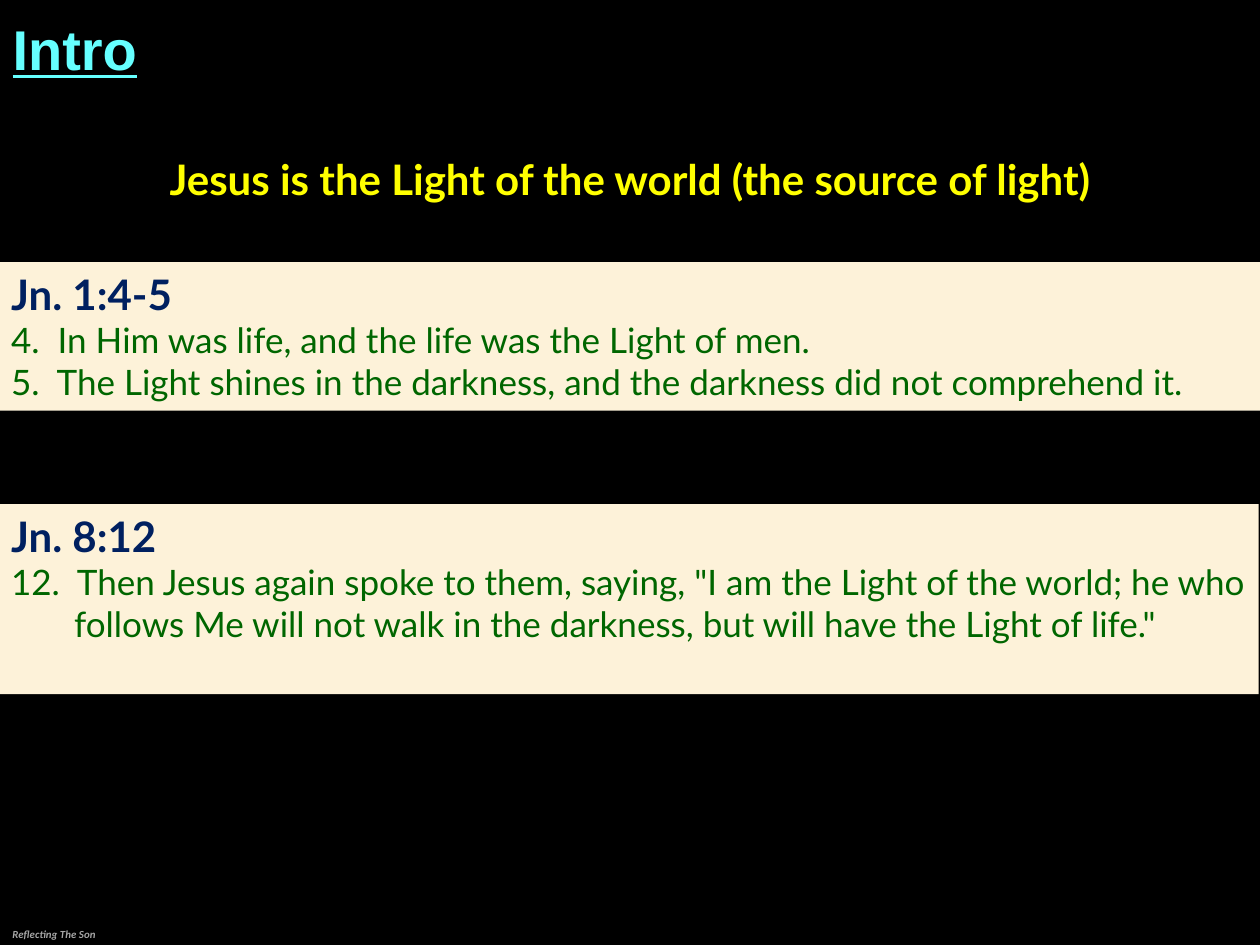
from pptx import Presentation
from pptx.dml.color import RGBColor
from pptx.enum.shapes import MSO_SHAPE
from pptx.enum.text import MSO_ANCHOR, MSO_AUTO_SIZE, PP_ALIGN
from pptx.util import Inches, Pt

COLORS = {
    "background": "000000",
    "title": "66FFFF",
    "statement": "FFFF00",
    "panel": "FDF2D9",
    "reference": "002060",
    "verse": "006600",
    "footer": "A6A6A6",
}


def write(frame, text, size, color, font="Lato", bold=False, italic=False,
          underline=False, align=PP_ALIGN.LEFT, hanging=0, before=0, first=True):
    paragraph = frame.paragraphs[0] if first else frame.add_paragraph()
    paragraph.alignment = align
    paragraph.space_before = Pt(before)
    if hanging:
        properties = paragraph._p.get_or_add_pPr()
        properties.set("marL", str(Inches(hanging)))
        properties.set("indent", str(-Inches(hanging)))
    run = paragraph.add_run()
    run.text = text
    run.font.name = font
    run.font.size = Pt(size)
    run.font.bold = bold
    run.font.italic = italic
    run.font.underline = underline
    run.font.color.rgb = RGBColor.from_string(COLORS[color])


def place(shape, left, top, width, height, anchor=MSO_ANCHOR.TOP):
    shape.left, shape.width = (int(share * presentation.slide_width) for share in (left, width))
    shape.top, shape.height = (int(share * presentation.slide_height) for share in (top, height))
    frame = shape.text_frame
    frame.word_wrap = True
    frame.auto_size = MSO_AUTO_SIZE.NONE
    frame.vertical_anchor = anchor
    return frame


presentation = Presentation()
presentation.slide_width = Inches(10)
presentation.slide_height = Inches(7.5)
slide = presentation.slides.add_slide(presentation.slide_layouts[5])
slide.background.fill.solid()
slide.background.fill.fore_color.rgb = RGBColor.from_string(COLORS["background"])

footer = slide.shapes.add_textbox(0, 0, 0, 0)
frame = place(footer, 0, 7.32 / 7.5, 0.4, 0.18 / 7.5, MSO_ANCHOR.MIDDLE)
write(frame, "Reflecting The Son", 6.2, "footer", font="Calibri", bold=True, italic=True)

frame = place(slide.shapes.title, 0, 0.02 / 7.5, 1, 0.68 / 7.5, MSO_ANCHOR.BOTTOM)
write(frame, "Intro", 32, "title", font="Arial", bold=True, underline=True, before=4)

statement = slide.shapes.add_textbox(0, 0, 0, 0)
frame = place(statement, 0, 1.17 / 7.5, 1, 0.5 / 7.5)
write(frame, "Jesus is the Light of the world (the source of light)", 24, "statement",
      bold=True, align=PP_ALIGN.CENTER, hanging=0.5)

passages = [
    (2.08, 1.18, 1.002, "Jn. 1:4-5", [
        "4.  In Him was life, and the life was the Light of men.",
        "5.  The Light shines in the darkness, and the darkness did not comprehend it.",
    ]),
    (4, 1.51, 1, "Jn. 8:12", [
        '12.  Then Jesus again spoke to them, saying, "I am the Light of the world; '
        'he who follows Me will not walk in the darkness, but will have the Light of life."',
    ]),
]
for top, height, width, reference, verses in passages:
    panel = slide.shapes.add_shape(MSO_SHAPE.RECTANGLE, 0, 0, 0, 0)
    panel.shadow.inherit = False
    panel.fill.solid()
    panel.fill.fore_color.rgb = RGBColor.from_string(COLORS["panel"])
    panel.line.fill.background()
    frame = place(panel, -0.001, top / 7.5, width, height / 7.5)
    write(frame, reference, 24, "reference", bold=True, hanging=0.5)
    for verse in verses:
        write(frame, verse, 20, "verse", hanging=0.5, first=False)

presentation.save("out.pptx")
